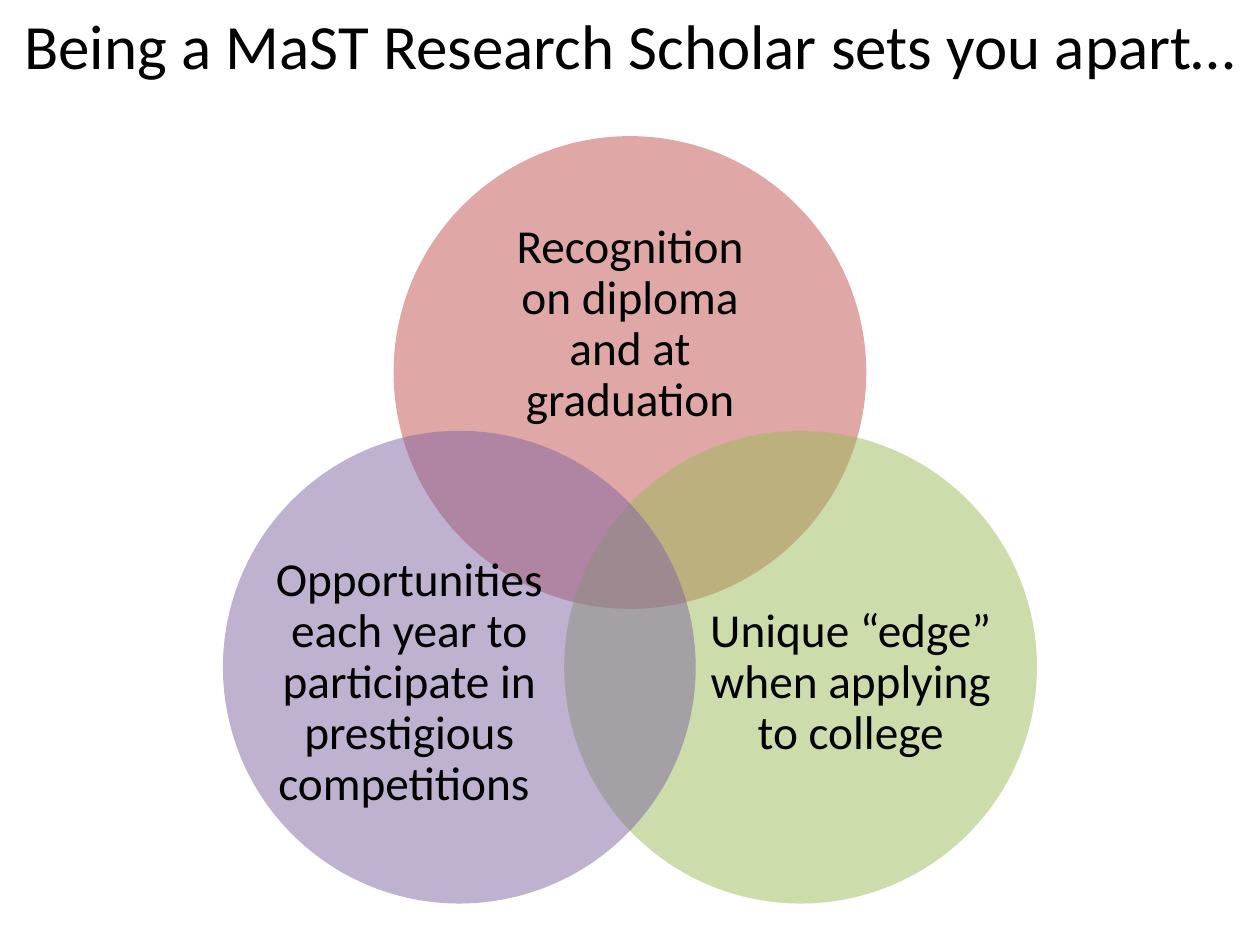
from lxml import etree
from pptx import Presentation
from pptx.dml.color import RGBColor
from pptx.enum.shapes import MSO_SHAPE
from pptx.enum.text import MSO_ANCHOR, MSO_AUTO_SIZE, PP_ALIGN
from pptx.oxml.ns import qn
from pptx.util import Cm, Pt

OVAL = MSO_SHAPE.OVAL
MIDDLE = MSO_ANCHOR.MIDDLE
CENTER = PP_ALIGN.CENTER
NO_AUTOFIT = MSO_AUTO_SIZE.NONE
FONT = "Calibri"
BLACK = "000000"

SLIDE_W, SLIDE_H = 25.4, 19.05
MID_X = SLIDE_W / 2
DIAMETER = 9.53
LABEL_W = 5.72

# Offset from the middle and centre height of each circle, its colour,
# then offset, centre height and box height of its label, and the wording
CIRCLES = [
    (0, 7.51, "C0504D", 0, 6.54, 4.29,
     "Recognition on diploma and at graduation"),
    (3.44, 13.45, "9BBB59", 4.45, 13.77, 5.23,
     "Unique “edge” when applying to college"),
    (-3.44, 13.45, "8064A2", -4.45, 13.77, 5.23,
     "Opportunities each year to participate in prestigious competitions "),
]


def rgb(color):
    return RGBColor.from_string(color)


def centered_box(cx, cy, w, h):
    return Cm(cx - w / 2), Cm(cy - h / 2), Cm(w), Cm(h)


def write(tf, text, size):
    tf.word_wrap = True
    tf.auto_size = NO_AUTOFIT
    tf.vertical_anchor = MIDDLE
    p = tf.paragraphs[0]
    p.alignment = CENTER
    r = p.add_run()
    r.text = text
    r.font.name = FONT
    r.font.size = Pt(size)
    r.font.color.rgb = rgb(BLACK)
    return p


def add_title(s, text):
    sp = s.shapes.title
    sp.left, sp.top, sp.width, sp.height = Cm(0), Cm(0), Cm(SLIDE_W), Cm(1.8)
    write(sp.text_frame, text, 36)


def add_circle(s, cx, cy, color):
    sp = s.shapes.add_shape(OVAL, *centered_box(cx, cy, DIAMETER, DIAMETER))
    sp.shadow.inherit = False
    sp.line.fill.background()
    sp.fill.solid()
    sp.fill.fore_color.rgb = rgb(color)
    # Half transparent, so that the overlaps show
    clr = sp._element.spPr.find(qn("a:solidFill")).find(qn("a:srgbClr"))
    etree.SubElement(clr, qn("a:alpha"), val="50000")


def add_label(s, cx, cy, h, text):
    sp = s.shapes.add_textbox(*centered_box(cx, cy, LABEL_W, h))
    tf = sp.text_frame
    tf.margin_left = tf.margin_right = tf.margin_top = tf.margin_bottom = 0
    p = write(tf, text, 27)
    p.line_spacing = 0.9


def main():
    prs = Presentation()
    prs.slide_width, prs.slide_height = Cm(SLIDE_W), Cm(SLIDE_H)
    s = prs.slides.add_slide(prs.slide_layouts[5])

    # Venn diagram
    for dx, cy, color, label_dx, label_cy, label_h, text in CIRCLES:
        add_circle(s, MID_X + dx, cy, color)
        add_label(s, MID_X + label_dx, label_cy, label_h, text)

    # Title
    add_title(s, "Being a MaST Research Scholar sets you apart…")

    prs.save("out.pptx")


if __name__ == "__main__":
    main()
